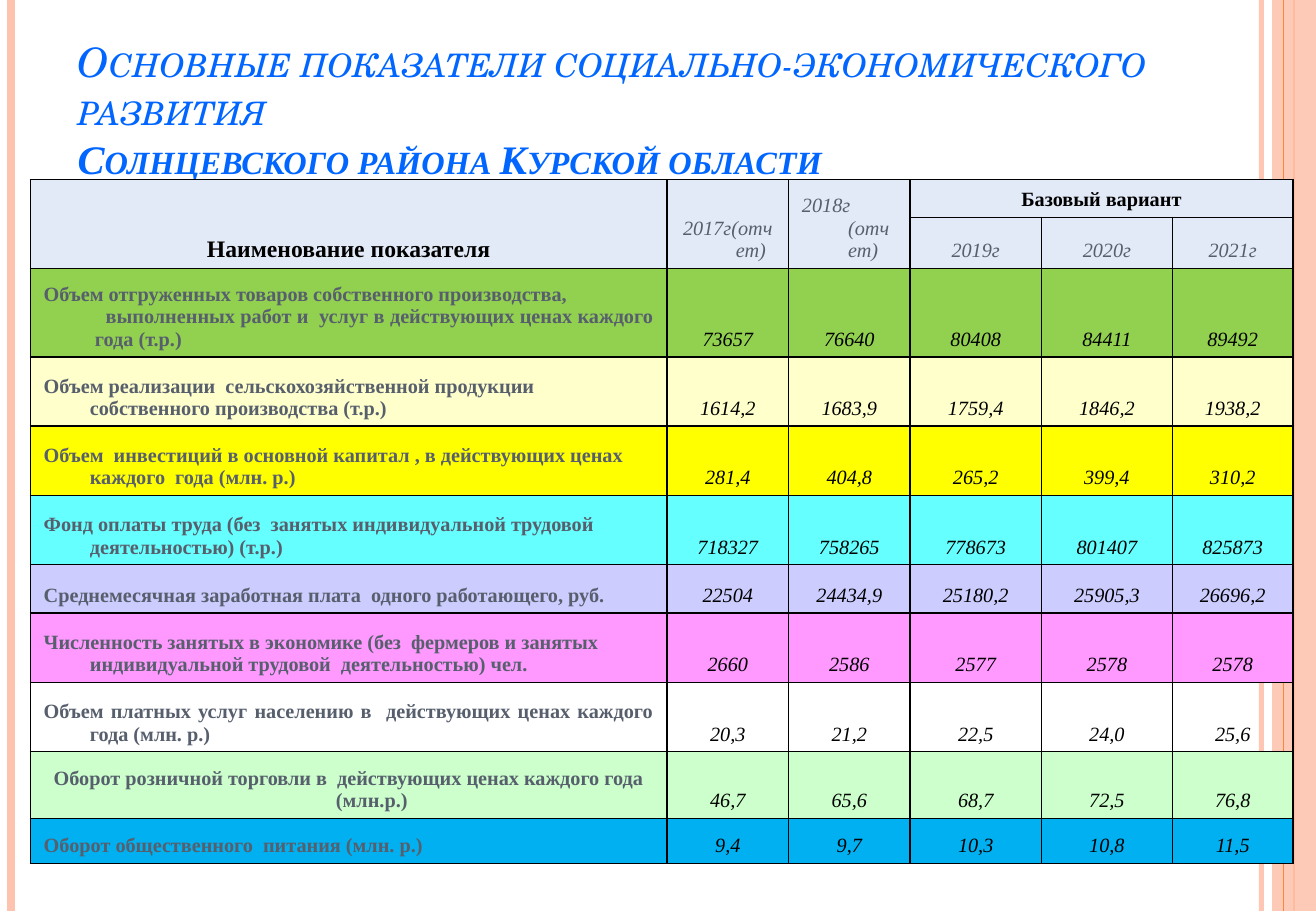
from pptx import Presentation
from pptx.dml.color import RGBColor
from pptx.enum.shapes import MSO_CONNECTOR, MSO_SHAPE
from pptx.enum.text import MSO_ANCHOR, PP_ALIGN
from pptx.oxml.ns import qn
from pptx.util import Inches, Pt
from lxml import etree

LEFT, MID, FULL = PP_ALIGN.LEFT, PP_ALIGN.CENTER, PP_ALIGN.JUSTIFY
BOTTOM = MSO_ANCHOR.BOTTOM
LINE, RECT = MSO_CONNECTOR.STRAIGHT, MSO_SHAPE.RECTANGLE
SERIF, TITLE = "Times New Roman", "TeX Gyre Schola"
BLACK, GREY, PALE = "000000", "575F6D", "E3EAF7"
PEACH, ORANGE = "FEC3AE", "FE8637"
PLAIN = "{2D5ABB26-0587-4C30-8999-92F81FD0307C}"
WIDE, HIGH = 10.83, 7.5


def paint(fill, color, alpha=100):
    fill.solid()
    fill.fore_color.rgb = RGBColor.from_string(color)
    if alpha < 100:
        tint = fill._xPr.find(qn("a:solidFill"))[0]
        etree.SubElement(tint, qn("a:alpha"), val=str(alpha * 1000))


def style(run, size, color, bold=False, italic=False, font=SERIF):
    run.font.size = Pt(size)
    run.font.name = font
    run.font.bold, run.font.italic = bold, italic
    paint(run.font.fill, color)


prs = Presentation()
prs.slide_width, prs.slide_height = Inches(WIDE), Inches(HIGH)
slide = prs.slides.add_slide(prs.slide_layouts[6])
shapes = slide.shapes

# Side stripes: lines, then the band, then the thin line over it
for x, color, width, alpha in [(10.38, PEACH, 3, 93), (0.09, PEACH, 4.5, 100),
                               (10.65, ORANGE, 1.5, 100), (None, PEACH, 0, 87),
                               (10.56, ORANGE, 0.75, 100)]:
    if x is None:
        band = shapes.add_shape(RECT, Inches(10.47), 0, Inches(WIDE - 10.47), Inches(HIGH))
        band.shadow.inherit = False
        band.line.fill.background()
        paint(band.fill, color, alpha)
        continue
    stripe = shapes.add_connector(LINE, Inches(x), 0, Inches(x), Inches(HIGH))
    stripe.line.width = Pt(width)
    paint(stripe.line.fill, color, alpha)
    etree.SubElement(stripe._element.spPr, qn("a:effectLst"))

# Title
box = shapes.add_textbox(Inches(0.54), Inches(0.3), Inches(9.75), Inches(1.25))
frame = box.text_frame
frame.word_wrap = True
frame.vertical_anchor = BOTTOM
frame.text = ("Основные показатели социально-экономического развития\v"
              "Солнцевского района Курской области")
for run, font, bold in zip(frame.paragraphs[0].runs, (TITLE, SERIF), (False, True)):
    style(run, 24, "0066FF", bold, True, font)
    run._r.get_or_add_rPr().set("cap", "small")

# Table content: fill, alignment of the label, label, values
rows = [
    ("92D050", FULL, "Объем отгруженных товаров собственного производства,\n"
     "выполненных работ и  услуг в действующих ценах каждого  года (т.р.)",
     "73657 76640 80408 84411 89492"),
    ("FFFFCC", LEFT, "Объем реализации  сельскохозяйственной продукции "
     "собственного производства (т.р.)", "1614,2 1683,9 1759,4 1846,2 1938,2"),
    ("FFFF00", LEFT, "Объем  инвестиций в основной капитал , в действующих ценах "
     "каждого  года (млн. р.)", "281,4 404,8 265,2 399,4 310,2"),
    ("66FFFF", LEFT, "Фонд оплаты труда (без  занятых индивидуальной трудовой  "
     "деятельностью) (т.р.)", "718327 758265 778673 801407 825873"),
    ("CCCCFF", LEFT, "Среднемесячная заработная плата  одного работающего, руб.",
     "22504 24434,9 25180,2 25905,3 26696,2"),
    ("FF99FF", LEFT, "Численность занятых в экономике (без  фермеров и занятых "
     "индивидуальной трудовой  деятельностью) чел.", "2660 2586 2577 2578 2578"),
    (None, FULL, "Объем платных услуг населению в  действующих ценах каждого года "
     "(млн. р.)", "20,3 21,2 22,5 24,0 25,6"),
    ("CCFFCC", MID, "Оборот розничной торговли в  действующих ценах каждого года "
     "(млн.р.)", "46,7 65,6 68,7 72,5 76,8"),
    ("00B0F0", FULL, "Оборот общественного  питания (млн. р.)",
     "9,4 9,7 10,3 10,8 11,5"),
]
# Cell texts by row; slots are the columns where the six fields start
heads = [
    [""] * 6,
    [""] * 6,
    ["Наименование показателя", "2017г(отчет)", "2018г (отчет)", "Базовый вариант", "", ""],
    ["", "", "", "2019г", "2020г", "2021г"],
]
grid = heads + [[label] + nums.split() for _, _, label, nums in rows]
slots = [0, 1, 2, 3, 4, 6]
cols = [5.24, 1, 1, 1.08, 0.65, 0.43, 0.3, 0.69]
tall = [0.66, 0.59, 0.31, 0.42, 0.73, 0.57, 0.57, 0.57, 0.4, 0.57, 0.57, 0.55, 0.37]

# Table frame and merged cells
table = shapes.add_table(len(tall), len(cols), Inches(0.25), Inches(0.23),
                         Inches(sum(cols)), Inches(sum(tall))).table
table.first_row = table.horz_banding = False
table._tbl.tblPr.find(qn("a:tableStyleId")).text = PLAIN
for col, width in zip(table.columns, cols):
    col.width = Inches(width)
for row, height in zip(table.rows, tall):
    row.height = Inches(height)
spans = [(0, 0, 0, 7), (1, 3, 1, 4), (1, 5, 1, 6), (2, 3, 2, 7)]
spans += [(2, c, 3, c) for c in range(3)]
spans += [(r, c, r, c + 1) for r in range(3, len(tall)) for c in (4, 6)]
for top, left, low, right in spans:
    table.cell(top, left).merge(table.cell(low, right))

# Cells
for r, texts in enumerate(grid):
    head = r < len(heads)
    color, align = (PALE, MID) if head else rows[r - len(heads)][:2]
    if r < 2:
        color = None
    sides = [(), ("lnB",)][r] if r < 2 else ("lnL", "lnR", "lnT", "lnB")
    for c in range(len(cols)):
        cell = table.cell(r, c)
        cell.vertical_anchor = BOTTOM
        cell.margin_left = cell.margin_right = Inches(0.11)
        cell.margin_top = cell.margin_bottom = Inches(0.05)
        props = cell._tc.get_or_add_tcPr()
        for side in sides:
            edge = etree.SubElement(props, qn("a:" + side), w=str(Pt(1)))
            solid = etree.SubElement(edge, qn("a:solidFill"))
            etree.SubElement(solid, qn("a:srgbClr"), val=BLACK)
        if color:
            paint(cell.fill, color)
        else:
            cell.fill.background()
        text = texts[slots.index(c)] if c in slots else ""
        cell.text_frame.text = text
        bold = c == 0 or (r == 2 and c == 3)
        ink = BLACK if bold == head else GREY
        size = 14 if head and c == 0 else 12
        for n, para in enumerate(cell.text_frame.paragraphs):
            if text:
                para.alignment = align if c == 0 else MID
                if head and c == 2:
                    para.alignment = FULL
                if "\n" in text and n == 0:
                    para.alignment = LEFT
                indent = para._p.get_or_add_pPr()
                indent.set("marL", str(Inches(0.38)))
                indent.set("indent", str(Inches(0.13 if n else -0.38)))
            for run in para.runs:
                style(run, size, ink, bold, not bold)
            etree.SubElement(para._p, qn("a:endParaRPr"), sz=str(size * 100))

prs.save("out.pptx")
